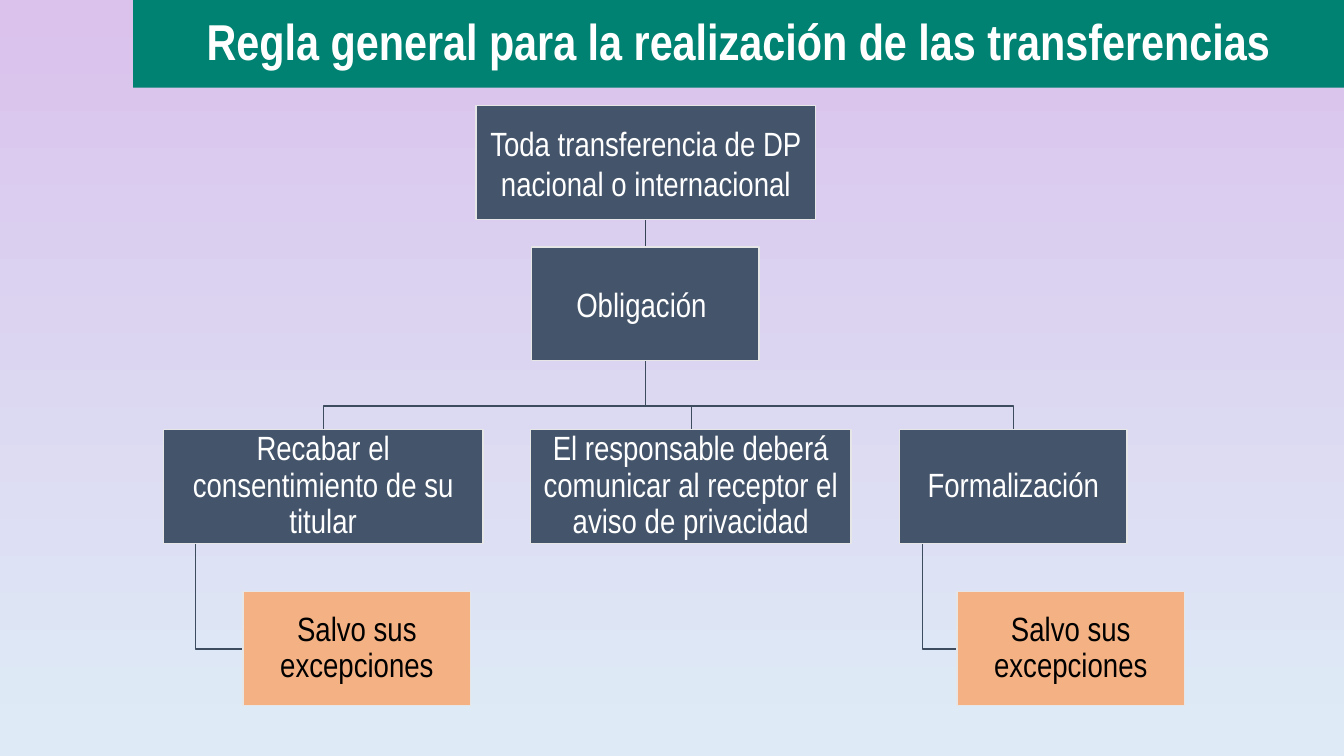
"""Build the slide on the general rule for personal data transfers."""
import lxml.etree
import pptx
import pptx.dml.color
import pptx.enum.shapes
import pptx.enum.text
import pptx.oxml.ns
import pptx.util

Inches = pptx.util.Inches
RGBColor = pptx.dml.color.RGBColor
RECTANGLE = pptx.enum.shapes.MSO_SHAPE.RECTANGLE

LILAC = RGBColor(0xDA, 0xC2, 0xEC)
PALE_BLUE = RGBColor(0xDE, 0xEB, 0xF7)
GREEN = RGBColor(0x00, 0x82, 0x72)
SLATE = RGBColor(0x44, 0x54, 0x6A)
ORANGE = RGBColor(0xF4, 0xB1, 0x83)
LIGHT_GRAY = RGBColor(0xE7, 0xE6, 0xE6)
BRANCH_COLOR = RGBColor(0x3E, 0x4C, 0x60)
TRUNK_COLOR = RGBColor(0x36, 0x43, 0x55)
WHITE = RGBColor(0xFF, 0xFF, 0xFF)
BLACK = RGBColor(0x00, 0x00, 0x00)

BOX_HEIGHT = 1.13
ROW_TOPS = [1.05, 2.45, 4.26, 5.87]
TRUNK_X = 6.4
BRANCH_Y = 4.03


def add_box(left, top, width, height, fill, lines, line_spacing, font_format):
    shape = slide.shapes.add_shape(
        RECTANGLE, Inches(left), Inches(top), Inches(width), Inches(height))
    shape.shadow.inherit = False
    shape.fill.solid()
    shape.fill.fore_color.rgb = fill
    frame = shape.text_frame
    frame_format = {
        "word_wrap": True,
        "vertical_anchor": pptx.enum.text.MSO_ANCHOR.MIDDLE,
        "margin_left": Inches(0.02),
        "margin_right": Inches(0.02),
        "margin_top": Inches(0.02),
        "margin_bottom": Inches(0.02),
    }
    for name, value in frame_format.items():
        setattr(frame, name, value)
    frame.text = "\n".join(lines)
    for paragraph in frame.paragraphs:
        paragraph.alignment = pptx.enum.text.PP_ALIGN.CENTER
        paragraph.line_spacing = line_spacing
        for run in paragraph.runs:
            run.font.color.rgb = BLACK if fill == ORANGE else WHITE
            for name, value in font_format.items():
                setattr(run.font, name, value)
    return shape


presentation = pptx.Presentation()
presentation.slide_width = Inches(13.33)
presentation.slide_height = Inches(7.5)
slide = presentation.slides.add_slide(presentation.slide_layouts[6])

background = slide.background.fill
background.gradient()
background.gradient_angle = 270
for stop, position, color in zip(
        background.gradient_stops, [0, 0.98], [LILAC, PALE_BLUE]):
    stop.position = position
    stop.color.rgb = color

title_font = {"name": "Arial Narrow", "size": pptx.util.Pt(36), "bold": True}
title = add_box(
    1.32, 0, 12.01, 0.87, GREEN,
    ["Regla general para la realización de las transferencias"], 0.9, title_font)
title.line.fill.background()

branches = [
    [(TRUNK_X, 3.58), (TRUNK_X, BRANCH_Y), (x, BRANCH_Y), (x, ROW_TOPS[2])]
    for x in [10.05, 6.86, 3.21]
]
exceptions = [
    [(x, 5.4), (x, 6.44), (box_left, 6.44)]
    for x, box_left in [(9.15, 9.49), (1.94, 2.41)]
]
for points in branches + exceptions:
    corners = [(Inches(x), Inches(y)) for x, y in points]
    builder = slide.shapes.build_freeform(*corners[0])
    builder.add_line_segments(corners[1:], close=False)
    elbow = builder.convert_to_shape()
    elbow.shadow.inherit = False
    elbow.fill.background()
    elbow.line.color.rgb = BRANCH_COLOR
    elbow.line.width = pptx.util.Pt(1)

trunk = slide.shapes.add_connector(
    pptx.enum.shapes.MSO_CONNECTOR.STRAIGHT,
    Inches(TRUNK_X), Inches(2.18), Inches(TRUNK_X), Inches(ROW_TOPS[1]))
trunk.line.color.rgb = TRUNK_COLOR
trunk.line.width = pptx.util.Pt(1)
lxml.etree.SubElement(
    trunk._element.spPr, pptx.oxml.ns.qn("a:effectLst"))

boxes = [
    (4.72, 0, 3.37, SLATE, 1.0,
     ["Toda transferencia de DP", "nacional o internacional"]),
    (5.27, 1, 2.26, SLATE, 1.0, ["Obligación "]),
    (1.62, 2, 3.17, SLATE, 0.9, ["Recabar el consentimiento de su titular"]),
    (2.41, 3, 2.26, ORANGE, 0.9, ["Salvo sus excepciones"]),
    (5.26, 2, 3.18, SLATE, 0.9,
     ["El responsable deberá comunicar al receptor el aviso de privacidad"]),
    (8.92, 2, 2.26, SLATE, 0.9, ["Formalización"]),
    (9.49, 3, 2.26, ORANGE, 0.9, ["Salvo sus excepciones"]),
]
box_font = {"name": "Arial Narrow", "size": pptx.util.Pt(24)}
for left, row, width, fill, line_spacing, lines in boxes:
    box = add_box(
        left, ROW_TOPS[row], width, BOX_HEIGHT, fill, lines, line_spacing, box_font)
    box.line.color.rgb = LIGHT_GRAY
    box.line.width = pptx.util.Pt(1)

presentation.save("out.pptx")
